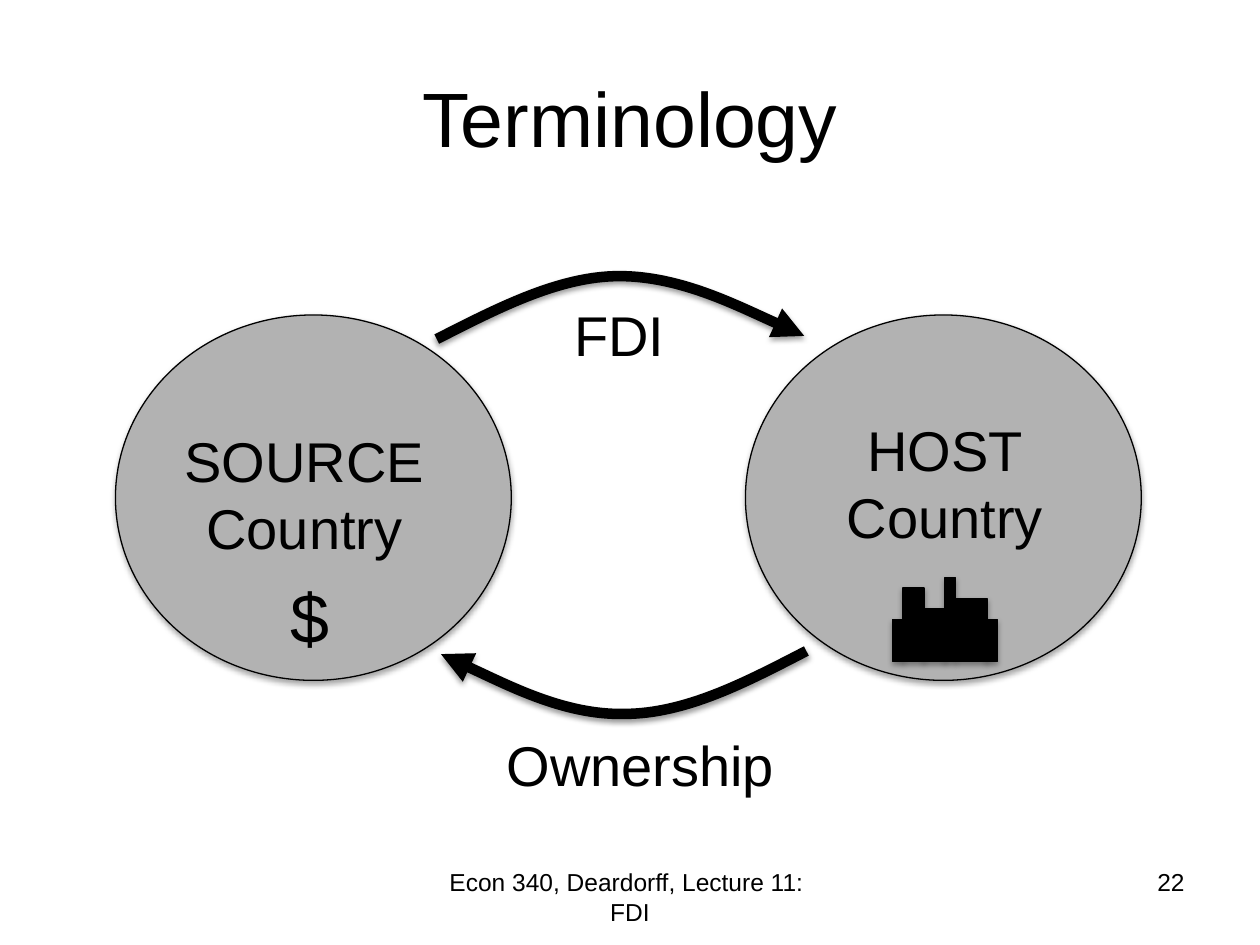
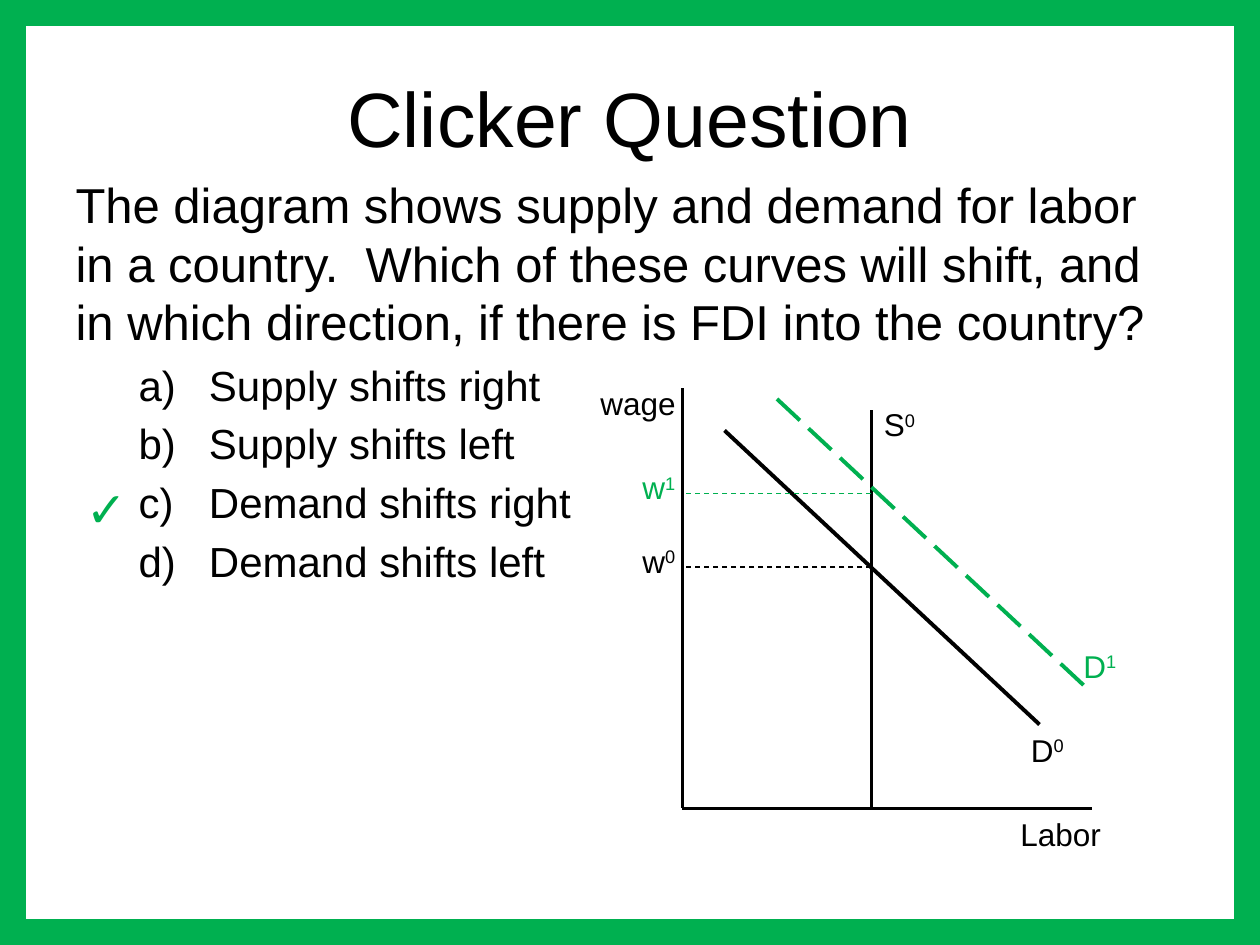
"""Build two lecture slides on foreign direct investment: terminology and a clicker question."""
from dataclasses import dataclass

from lxml.etree import SubElement
from pptx import Presentation
from pptx.dml.color import RGBColor
from pptx.enum.dml import MSO_LINE
from pptx.enum.shapes import MSO_CONNECTOR, MSO_SHAPE
from pptx.enum.text import MSO_ANCHOR, MSO_AUTO_SIZE, PP_ALIGN
from pptx.oxml.ns import qn
from pptx.util import Emu, Pt

PX = 7620


@dataclass(frozen=True)
class Theme:
    font: str = "Arial"
    ink: RGBColor = RGBColor(0x00, 0x00, 0x00)
    answer: RGBColor = RGBColor(0x00, 0xB0, 0x50)
    country: RGBColor = RGBColor(0xB2, 0xB2, 0xB2)
    title: int = 44
    money: int = 40
    term: int = 32
    question: int = 28
    choice: int = 24
    axis: int = 18
    footer: int = 14


THEME = Theme()


def write(frame, text, size, color=THEME.ink, align=PP_ALIGN.LEFT, power=""):
    frame.word_wrap = True
    frame.auto_size = MSO_AUTO_SIZE.NONE
    frame.text = text
    for paragraph in frame.paragraphs:
        paragraph.alignment = align
        if power:
            exponent = paragraph.add_run()
            exponent.text = power
            exponent._r.get_or_add_rPr().set("baseline", "30000")
        for run in paragraph.runs:
            run.font.name = THEME.font
            run.font.size = Pt(size)
            run.font.color.rgb = color


def draw(shape, width, color=THEME.ink, fill=None, dash=None, shadow=0):
    shape.line.color.rgb = color
    shape.line.width = Pt(width)
    if dash:
        shape.line.dash_style = dash
    if fill is not None:
        shape.fill.solid()
        shape.fill.fore_color.rgb = fill
    effects = SubElement(shape._element.spPr, qn("a:effectLst"))
    if shadow:
        outer = SubElement(effects, qn("a:outerShdw"), blurRad="40000", dist="23000",
                           dir="5400000", rotWithShape="0")
        tint = SubElement(outer, qn("a:srgbClr"), val=str(THEME.ink))
        SubElement(tint, qn("a:alpha"), val=str(shadow * 1000))


deck = Presentation()
deck.slide_width, deck.slide_height = Emu(1200 * PX), Emu(900 * PX)
terminology = deck.slides.add_slide(deck.slide_layouts[5])
clicker = deck.slides.add_slide(deck.slide_layouts[1])

for slide, heading in ((terminology, "Terminology"), (clicker, "Clicker Question")):
    title = slide.shapes.title
    title.left, title.top, title.width, title.height = (Emu(n * PX) for n in (60, 36, 1080, 150))
    write(title.text_frame, heading, THEME.title, align=PP_ALIGN.CENTER)
    title.text_frame.vertical_anchor = MSO_ANCHOR.MIDDLE

for left in (110, 710):
    country = terminology.shapes.add_shape(
        MSO_SHAPE.OVAL, *(Emu(n * PX) for n in (left, 300, 377, 348)))
    draw(country, 0.75, fill=THEME.country, shadow=35)

flows = (
    ((416, 323), (475, 293), (533, 263), (590, 263), (649, 263), (766, 320), (766, 320)),
    ((768, 620), (710, 650), (653, 680), (594, 680), (536, 681), (420, 623), (420, 623)),
)
for start, *controls in flows:
    builder = terminology.shapes.build_freeform(*start, scale=PX)
    builder.add_line_segments(controls, close=False)
    flow = builder.convert_to_shape()
    flow.fill.background()
    draw(flow, 6, shadow=38)
    SubElement(flow._element.spPr.find(qn("a:ln")), qn("a:tailEnd"), type="triangle")
    outline = next(flow._element.iter(qn("a:path")))
    steps = outline.findall(qn("a:lnTo"))
    for first in range(0, len(steps), 3):
        curve = SubElement(outline, qn("a:cubicBezTo"))
        for step in steps[first:first + 3]:
            curve.append(step[0])
            outline.remove(step)

factory = terminology.shapes.add_group_shape()
left, ground = 850, 630
for width, height in ((10, 40), (20, 70), (20, 50), (10, 80), (30, 60), (10, 40)):
    block = factory.shapes.add_shape(
        MSO_SHAPE.RECTANGLE, *(Emu(n * PX) for n in (left, ground - height, width, height)))
    draw(block, 0.75, fill=THEME.ink, shadow=35)
    left += width

question = clicker.placeholders[1]
question.left, question.top, question.width, question.height = (
    Emu(n * PX) for n in (60, 160, 1080, 600))
write(question.text_frame, "\n".join((
    "The diagram shows supply and demand for labor in a country.  Which of these curves "
    "will shift, and in which direction, if there is FDI into the country?",
    "Supply shifts right",
    "Supply shifts left",
    "Demand shifts right",
    "Demand shifts left",
)), THEME.question)
prompt, *choices = question.text_frame.paragraphs
prompt_format = prompt._p.get_or_add_pPr()
prompt_format.set("marL", "0")
prompt_format.set("indent", "0")
SubElement(prompt_format, qn("a:buNone"))
for choice in choices:
    choice.level = 1
    choice.runs[0].font.size = Pt(THEME.choice)
    choice_format = choice._p.get_or_add_pPr()
    choice_format.set("marL", str(127 * PX))
    choice_format.set("indent", str(-67 * PX))
    SubElement(choice_format, qn("a:buFont"), typeface="+mj-lt")
    SubElement(choice_format, qn("a:buAutoNum"), type="alphaLcParenR")

border = clicker.shapes.add_shape(MSO_SHAPE.RECTANGLE, 0, 0, deck.slide_width, deck.slide_height)
border.fill.background()
draw(border, 30, THEME.answer)

wage_axis, supply, labor_axis = 650, 830, 770
curves = (
    ((wage_axis, 370, wage_axis, labor_axis), 2.25, THEME.ink, None),
    ((wage_axis, labor_axis, 1040, labor_axis), 2.25, THEME.ink, None),
    ((690, 410, 990, 690), 2.25, THEME.ink, None),
    ((supply, labor_axis, supply, 390), 2.25, THEME.ink, None),
    ((supply, 540, wage_axis, 540), 0.75, THEME.ink, MSO_LINE.DASH),
    ((740, 380, 1040, 660), 2.25, THEME.answer, MSO_LINE.LONG_DASH),
    ((supply, 470, wage_axis, 470), 0.75, THEME.answer, MSO_LINE.DASH),
)
for ends, weight, color, dash in curves:
    curve = clicker.shapes.add_connector(MSO_CONNECTOR.STRAIGHT, *(Emu(n * PX) for n in ends))
    draw(curve, weight, color, dash=dash)

centred = {"align": PP_ALIGN.CENTER}
green = {"color": THEME.answer}
labels = (
    (terminology, "Econ 340, Deardorff, Lecture 11:  FDI", (410, 820, 380, 62), THEME.footer, centred),
    (terminology, "22", (860, 820, 280, 62), THEME.footer, {"align": PP_ALIGN.RIGHT}),
    (terminology, "SOURCE\nCountry", (150, 400, 280, 142), THEME.term, centred),
    (terminology, "HOST\nCountry", (760, 390, 280, 142), THEME.term, centred),
    (terminology, "FDI", (450, 280, 280, 142), THEME.term, centred),
    (terminology, "Ownership", (470, 690, 280, 142), THEME.term, centred),
    (terminology, "$", (250, 540, 90, 92), THEME.money, centred),
    (clicker, "✓", (70, 450, 80, 68), THEME.question, green),
    (clicker, "wage", (560, 360, 130, 48), THEME.axis, {}),
    (clicker, "Labor", (960, 770, 120, 48), THEME.axis, {}),
    (clicker, "D", (970, 690, 80, 48), THEME.axis, {"power": "0"}),
    (clicker, "S", (830, 380, 80, 48), THEME.axis, {"power": "0"}),
    (clicker, "w", (600, 510, 90, 48), THEME.axis, {"power": "0"}),
    (clicker, "D", (1020, 610, 80, 48), THEME.axis, {"power": "1", **green}),
    (clicker, "w", (600, 440, 90, 48), THEME.axis, {"power": "1", **green}),
)
for slide, text, box, size, style in labels:
    label = slide.shapes.add_textbox(*(Emu(n * PX) for n in box))
    write(label.text_frame, text, size, **style)

deck.save("out.pptx")
